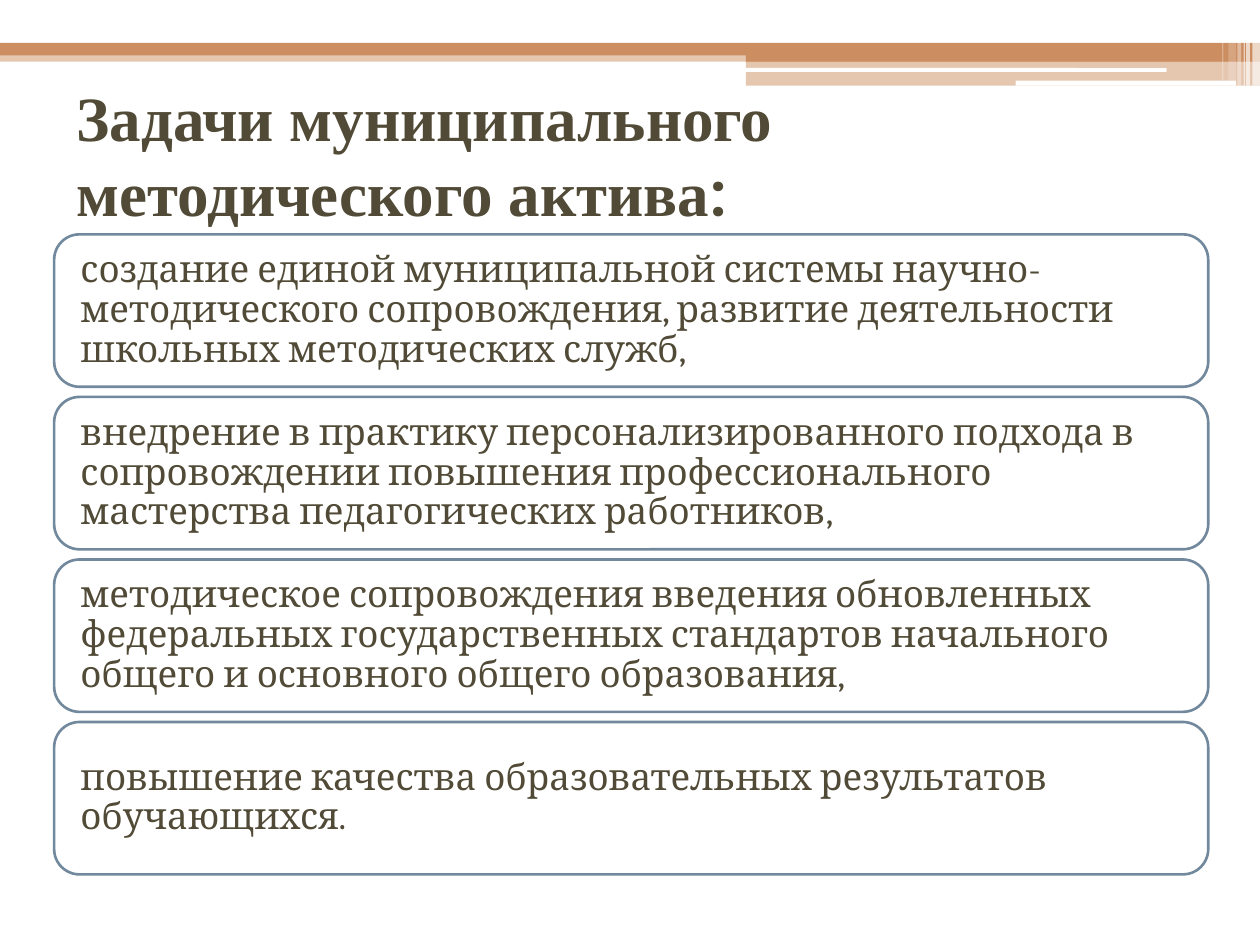
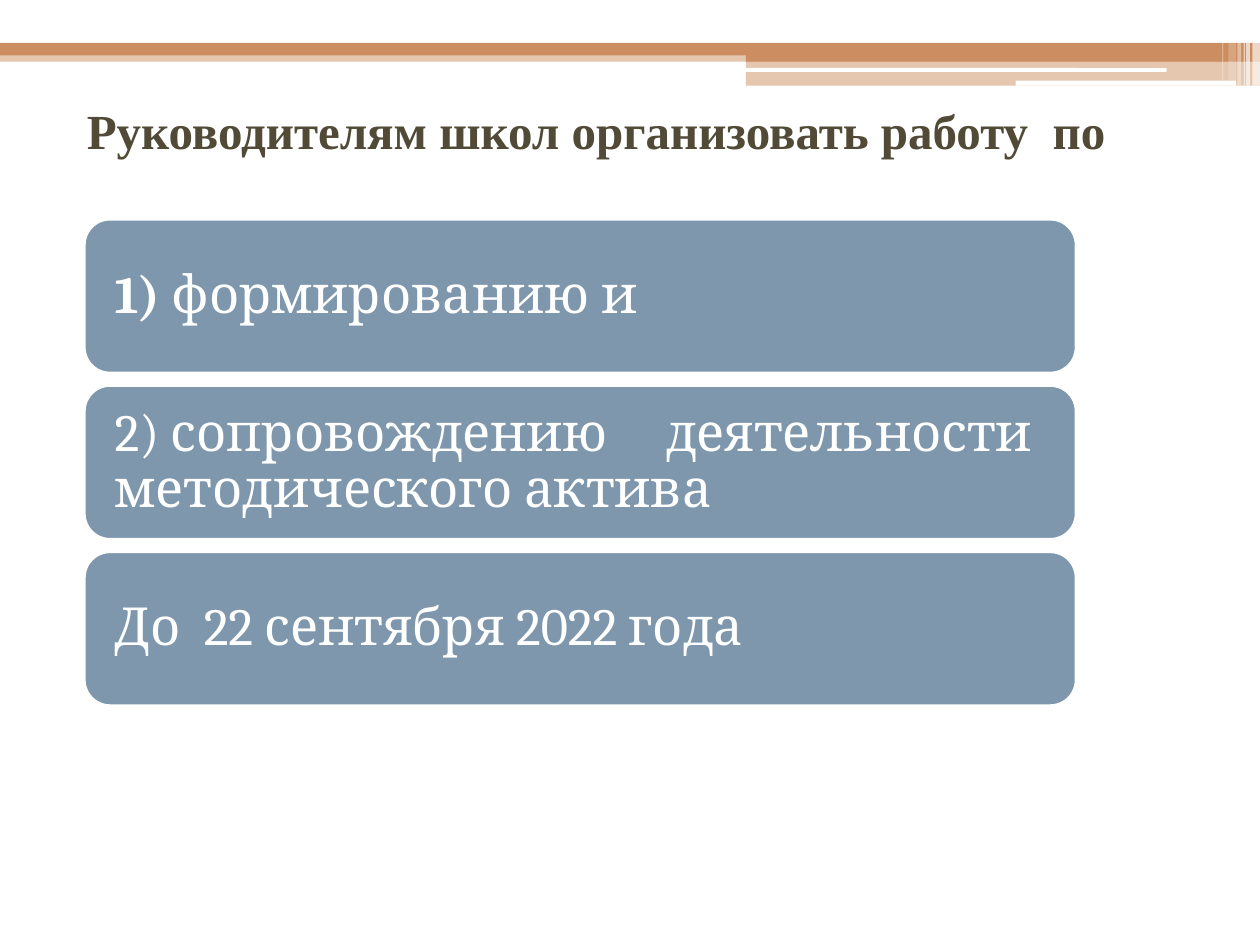
from pptx import Presentation
from pptx.dml.color import RGBColor
from pptx.enum.shapes import MSO_SHAPE as Kind
from pptx.enum.text import MSO_ANCHOR as Anchor, PP_ALIGN as Align
from pptx.oxml import parse_xml
from pptx.oxml.ns import nsdecls, qn
from pptx.util import Inches, Pt

HUES = {
    "white": "FFFFFF", "clay": "CC8E60", "ink": "504A36",
    "steel": "7E97AD", "edge": "72899D",
}

# kind, (left, top, width, height), colour, opacity in percent
BANDS = [
    (Kind.RECTANGLE, (0, 0.4, 10, 0.09), "clay", 50),
    (Kind.RECTANGLE, (0, 0, 10, 0.34), "white", 100),
    (Kind.RECTANGLE, (0, 0.34, 10, 0.1), "clay", 100),
    (Kind.RECTANGLE, (5.92, 0.39, 4.08, 0.1), "clay", 100),
    (Kind.RECTANGLE, (5.92, 0.48, 4.08, 0.2), "clay", 50),
    (Kind.ROUNDED_RECTANGLE, (5.91, 0.54, 3.35, 0.03), "white", 100),
    (Kind.ROUNDED_RECTANGLE, (8.06, 0.64, 1.75, 0.04), "white", 100),
]
# left, width, height, opacity in percent
STRIPES = [
    (9.94, 0.06, 0.68, 65), (9.89, 0.03, 0.68, 65), (9.87, 0.01, 0.68, 60),
    (9.82, 0.03, 0.68, 40), (9.75, 0.06, 0.64, 20), (9.7, 0.01, 0.64, 30),
]
BANDS += [(Kind.RECTANGLE, (x, 0, w, h), "white", a) for x, w, h, a in STRIPES]

TITLE = {"name": "Times New Roman", "bold": True}
BODY = {"name": "Cambria", "bold": False}

# Each text is a list of (words, format changes)
SLIDES = [
    {
        "title": [("Задачи муниципального  методического актива", {}),
                  (":", {"name": "Roboto"})],
        "place": (0.51, 0.44, 9, 1.56), "size": 36,
        "cards": [
            [("создание единой муниципальной системы научно-методического "
              "сопровождения, развитие деятельности школьных методических "
              "служб,", {})],
            [("внедрение в практику персонализированного подхода в "
              "сопровождении повышения профессионального мастерства "
              "педагогических работников,", {})],
            [("методическое сопровождения введения обновленных федеральных "
              "государственных стандартов начального общего и основного "
              "общего образования,", {})],
            [("повышение качества образовательных результатов "
              "обучающихся.", {})],
        ],
        "first": (0.43, 1.86, 9.16, 1.21), "step": 1.29,
        "look": {"fill": "white", "line": "edge", "ink": "ink",
                 "size": 21, "pad": 0.15},
    },
    {
        "title": [("Руководителям школ организовать работу  по", {})],
        "place": (0.59, 0.6, 8.92, 0.86), "size": 28,
        "cards": [
            [("1) ", {"bold": True}), ("формированию и", {})],
            [("2) сопровождению \tдеятельности методического актива", {})],
            [("До  22 сентября 2022 года", {})],
        ],
        "first": (0.67, 1.74, 7.87, 1.22), "step": 1.32,
        "look": {"fill": "steel", "line": "white", "ink": "white",
                 "size": 30, "pad": 0.18},
    },
]
TAB = 1.46


def tint(hue):
    return RGBColor.from_string(HUES[hue])


def add_box(slide, kind, place, hue):
    box = slide.shapes.add_shape(kind, *map(Inches, place))
    box.shadow.inherit = False
    box.fill.solid()
    box.fill.fore_color.rgb = tint(hue)
    box.line.fill.background()
    return box


def add_bands(slide):
    for kind, place, hue, alpha in BANDS:
        band = add_box(slide, kind, place, hue)
        if alpha < 100:
            clr = band._element.spPr.find(qn("a:solidFill"))[0]
            clr.append(parse_xml(
                f'<a:alpha {nsdecls("a")} val="{alpha * 1000}"/>'))


def write(shape, runs, base, size, ink, pad):
    """Fill a shape with one left-aligned, vertically centred paragraph."""
    frame = shape.text_frame
    side, edge = map(Inches, pad)
    form = {"word_wrap": True, "vertical_anchor": Anchor.MIDDLE,
            "margin_left": side, "margin_right": side,
            "margin_top": edge, "margin_bottom": edge}
    for key, val in form.items():
        setattr(frame, key, val)
    para = frame.paragraphs[0]
    para.alignment = Align.LEFT
    for words, change in runs:
        run = para.add_run()
        run.text = words
        run.font.color.rgb = tint(ink)
        for key, val in {**base, "size": Pt(size), **change}.items():
            setattr(run.font, key, val)
    return para


def add_card(slide, place, runs, look):
    card = add_box(slide, Kind.ROUNDED_RECTANGLE, place, look["fill"])
    card.line.color.rgb = tint(look["line"])
    card.line.width = Pt(1.5)
    pad = look["pad"]
    para = write(card, runs, BODY, look["size"], look["ink"], (pad, pad))
    para.line_spacing = 0.9
    para._p.get_or_add_pPr().set("defTabSz", str(Inches(TAB)))


def main():
    deck = Presentation()
    deck.slide_width, deck.slide_height = Inches(10), Inches(7.5)
    for page in SLIDES:
        slide = deck.slides.add_slide(deck.slide_layouts[6])
        add_bands(slide)
        head = slide.shapes.add_textbox(*map(Inches, page["place"]))
        write(head, page["title"], TITLE, page["size"], "ink", (0.1, 0.05))
        x, y, w, h = page["first"]
        for i, runs in enumerate(page["cards"]):
            add_card(slide, (x, y + i * page["step"], w, h), runs, page["look"])
    deck.save("out.pptx")


if __name__ == "__main__":
    main()
